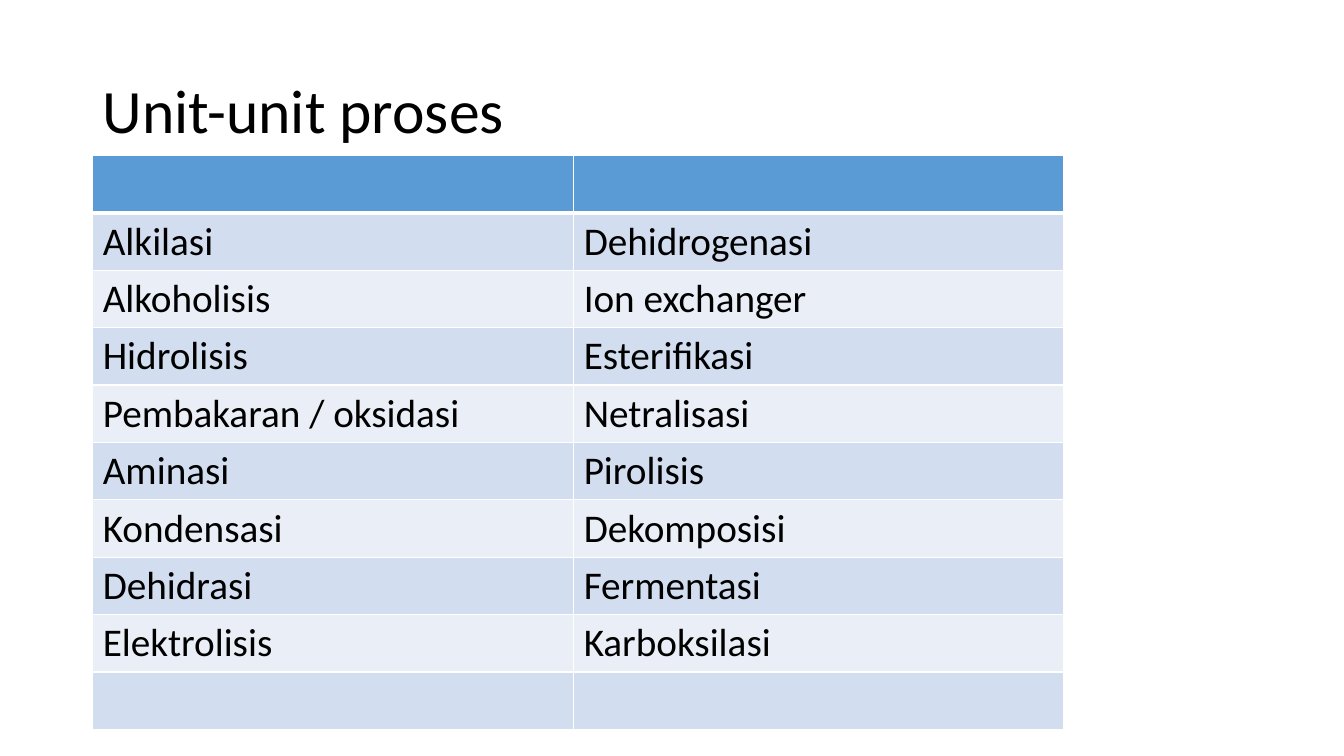
"""Build the slide that lists the process units in a two-column table."""

from dataclasses import dataclass

from lxml.etree import SubElement
from pptx import Presentation
from pptx.dml.color import RGBColor
from pptx.enum.text import MSO_ANCHOR
from pptx.oxml.ns import qn
from pptx.slide import Slide
from pptx.table import _Cell
from pptx.text.text import _Paragraph
from pptx.util import Inches, Pt


@dataclass(frozen=True)
class Theme:
    """Colours and type sizes of the slide."""

    font: str = "Calibri"
    text: str = "000000"
    header: str = "5B9BD5"
    bands: tuple[str, str] = ("D2DEEF", "EAEFF7")
    border: str = "FFFFFF"
    thin_border: float = 1
    thick_border: float = 3
    title_size: float = 44
    cell_size: float = 28


@dataclass(frozen=True)
class ProcessRow:
    """One table row with a process in each column."""

    left: str = ""
    right: str = ""


THEME = Theme()
COLUMN_WIDTHS = (4.77, 4.86)
ROW_HEIGHT = 0.57
ROWS = (
    ProcessRow(),
    ProcessRow("Alkilasi", "Dehidrogenasi"),
    ProcessRow("Alkoholisis", "Ion exchanger"),
    ProcessRow("Hidrolisis", "Esterifikasi"),
    ProcessRow("Pembakaran / oksidasi", "Netralisasi"),
    ProcessRow("Aminasi", "Pirolisis"),
    ProcessRow("Kondensasi", "Dekomposisi"),
    ProcessRow("Dehidrasi", "Fermentasi"),
    ProcessRow("Elektrolisis", "Karboksilasi"),
    ProcessRow(),
)


def add_run(paragraph: _Paragraph, text: str, size: float) -> None:
    """Add a run in the theme font and text colour."""
    run = paragraph.add_run()
    run.text = text
    run.font.name = THEME.font
    run.font.size = Pt(size)
    run.font.color.rgb = RGBColor.from_string(THEME.text)


def add_title(slide: Slide, text: str) -> None:
    """Add the slide title, centred vertically in its box."""
    shape = slide.shapes.add_textbox(Inches(0.92), Inches(0.4), Inches(11.5), Inches(1.45))
    frame = shape.text_frame
    frame.word_wrap = True
    frame.vertical_anchor = MSO_ANCHOR.MIDDLE
    paragraph = frame.paragraphs[0]
    paragraph.line_spacing = 0.9
    add_run(paragraph, text, THEME.title_size)


def add_borders(cell: _Cell, row_index: int) -> None:
    """Draw the cell borders, thick between the header and the body."""
    properties = cell._tc.get_or_add_tcPr()
    thick_side = {0: "lnB", 1: "lnT"}.get(row_index)
    for side in ("lnL", "lnR", "lnT", "lnB"):
        width = THEME.thick_border if side == thick_side else THEME.thin_border
        line = SubElement(properties, qn(f"a:{side}"), w=str(Pt(width)))
        fill = SubElement(line, qn("a:solidFill"))
        SubElement(fill, qn("a:srgbClr"), val=THEME.border)


def add_process_table(slide: Slide, rows: tuple[ProcessRow, ...]) -> None:
    """Add the table of processes with a header band and alternating rows."""
    table = slide.shapes.add_table(
        len(rows), len(COLUMN_WIDTHS), Inches(0.92), Inches(1.54),
        Inches(sum(COLUMN_WIDTHS)), Inches(ROW_HEIGHT * len(rows)),
    ).table
    for column, width in zip(table.columns, COLUMN_WIDTHS):
        column.width = Inches(width)
    for row_index, row in enumerate(rows):
        color = THEME.bands[(row_index - 1) % 2] if row_index else THEME.header
        for column_index, text in enumerate((row.left, row.right)):
            cell = table.cell(row_index, column_index)
            add_borders(cell, row_index)
            cell.fill.solid()
            cell.fill.fore_color.rgb = RGBColor.from_string(color)
            if text:
                add_run(cell.text_frame.paragraphs[0], text, THEME.cell_size)


def main() -> None:
    """Create the presentation and save it."""
    presentation = Presentation()
    presentation.slide_width = Inches(13.33)
    presentation.slide_height = Inches(7.5)
    slide = presentation.slides.add_slide(presentation.slide_layouts[6])
    add_title(slide, "Unit-unit proses")
    add_process_table(slide, ROWS)
    presentation.save("out.pptx")


if __name__ == "__main__":
    main()
